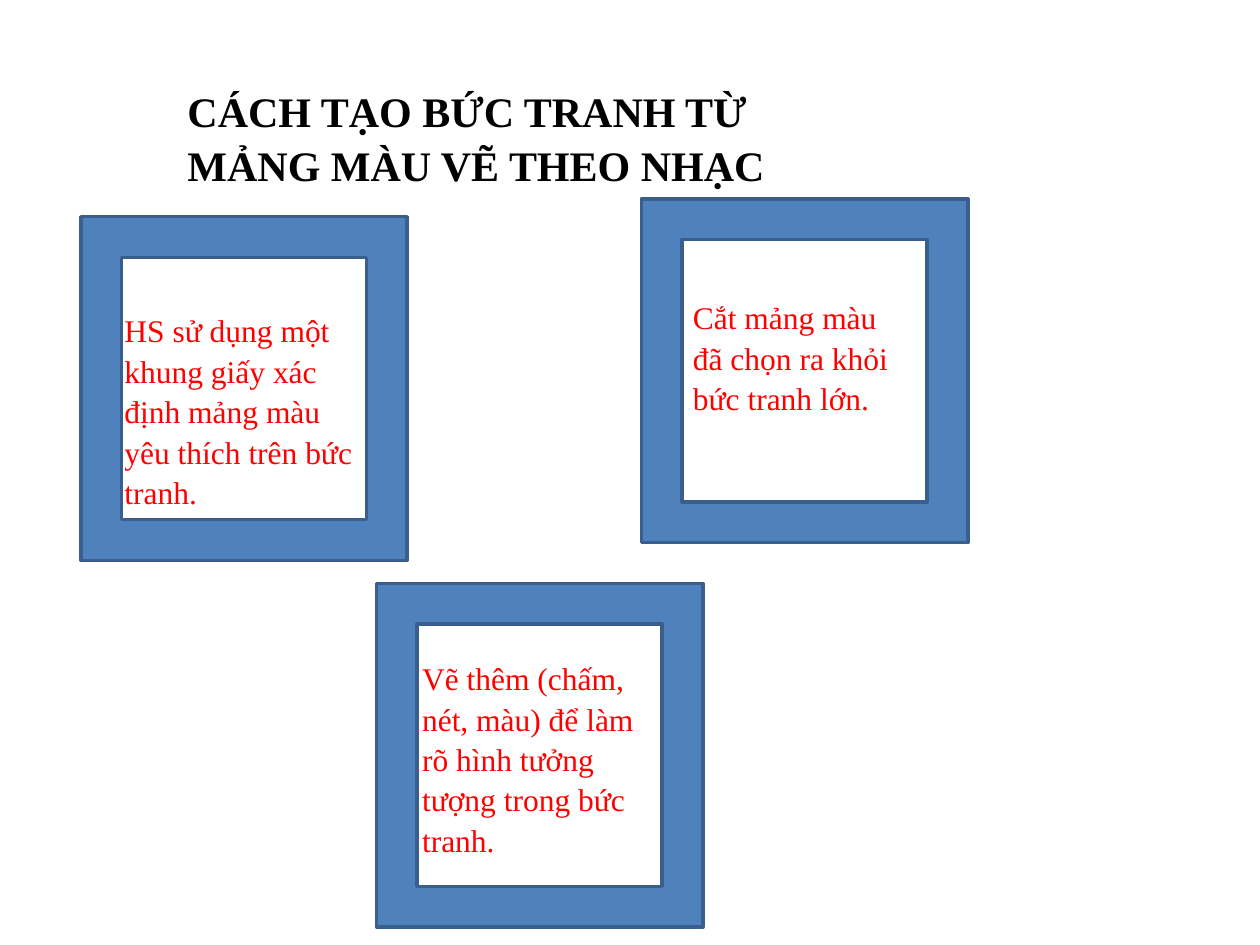
from dataclasses import dataclass

from pptx import Presentation
from pptx.dml.color import RGBColor
from pptx.enum import shapes, text
from pptx.util import Cm, Pt

COLOURS = {"title": "000000", "step": "FF0000", "frame": "4F81BD", "edge": "3A5F8C"}
FONT = "Times New Roman"
FRAME_WIDTH, FRAME_HEIGHT = Cm(6.58), Cm(6.93)


@dataclass(frozen=True)
class Caption:
    wording: str
    left: float
    top: float
    width: float
    height: float
    right_inset: float = 0.25
    size: int = 18
    colour: str = "step"
    bold: bool = False


@dataclass(frozen=True)
class Step:
    frame_left: float
    frame_top: float
    caption: Caption


TITLE = Caption("CÁCH TẠO BỨC TRANH TỪ MẢNG MÀU VẼ THEO NHẠC",
                3.53, 1.52, 12.7, 2.46, size=24, colour="title", bold=True)
STEPS = [
    Step(1.63, 4.37, Caption(
        "HS sử dụng một khung giấy xác định mảng màu yêu thích trên bức tranh.",
        2.26, 6.1, 5.33, 4.37, right_inset=0.35)),
    Step(12.93, 4.01, Caption(
        "Cắt mảng màu đã chọn ra khỏi bức tranh lớn.",
        13.72, 5.84, 5.03, 2.72, right_inset=0.5)),
    Step(7.59, 11.76, Caption(
        "Vẽ thêm (chấm, nét, màu) để làm rõ hình tưởng tượng trong bức tranh.",
        8.26, 13.11, 5.33, 4.37, right_inset=0.5)),
]


def colour(name: str) -> RGBColor:
    return RGBColor.from_string(COLOURS[name])


def draw_caption(slide, caption: Caption) -> None:
    box = slide.shapes.add_textbox(Cm(caption.left), Cm(caption.top),
                                   Cm(caption.width), Cm(caption.height))
    body = box.text_frame
    body.word_wrap = True
    body.auto_size = text.MSO_AUTO_SIZE.SHAPE_TO_FIT_TEXT
    body.margin_right = Cm(caption.right_inset)
    paragraph = body.paragraphs[0]
    paragraph.line_spacing = 1.07
    paragraph.space_after = Pt(8)
    words = paragraph.add_run()
    words.text = caption.wording
    words.font.name = FONT
    words.font.size = Pt(caption.size)
    words.font.bold = caption.bold
    words.font.color.rgb = colour(caption.colour)


def draw_step(slide, step: Step) -> None:
    frame = slide.shapes.add_shape(shapes.MSO_SHAPE.FRAME, Cm(step.frame_left),
                                   Cm(step.frame_top), FRAME_WIDTH, FRAME_HEIGHT)
    frame.shadow.inherit = False
    frame.fill.solid()
    frame.fill.fore_color.rgb = colour("frame")
    frame.line.color.rgb = colour("edge")
    frame.line.width = Pt(2)
    draw_caption(slide, step.caption)


def main() -> None:
    deck = Presentation()
    deck.slide_width, deck.slide_height = Cm(25.4), Cm(19.05)
    slide = deck.slides.add_slide(deck.slide_layouts[6])
    draw_caption(slide, TITLE)
    for step in STEPS:
        draw_step(slide, step)
    deck.save("out.pptx")


if __name__ == "__main__":
    main()
